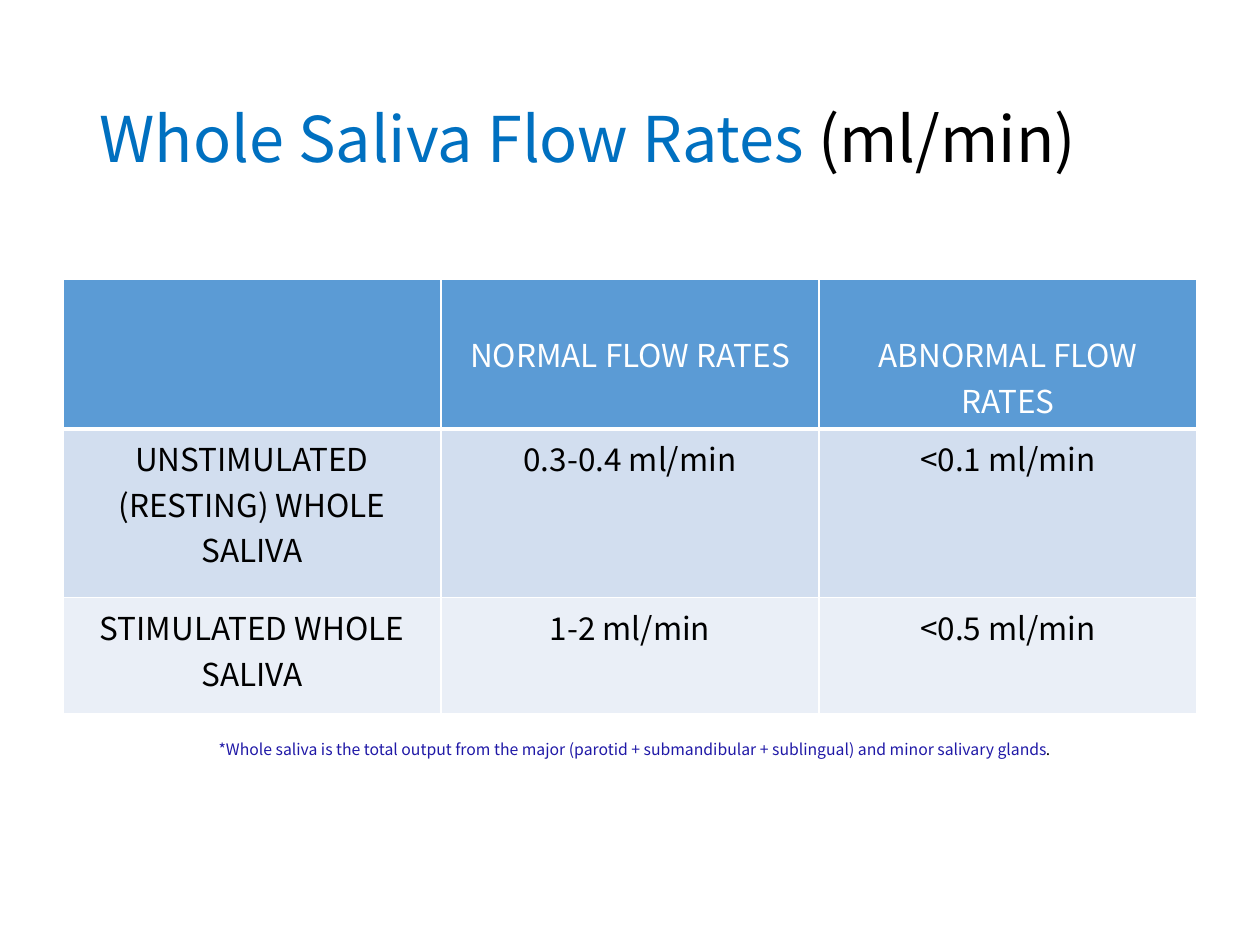
from pptx import Presentation
from pptx.dml.color import RGBColor
from pptx.enum.text import MSO_ANCHOR, MSO_AUTO_SIZE, PP_ALIGN
from pptx.oxml.ns import qn
from pptx.util import Inches, Pt
from lxml.etree import SubElement

COLORS = {
    "title": "0070C0", "text": "000000", "note": "2019A7", "white": "FFFFFF",
    "header": "5B9BD5", "band_dark": "D2DEEF", "band_light": "EAEFF7",
}
FONT = "Noto Sans CJK JP"


def add_text(paragraph, text, size=18, color="text", align=PP_ALIGN.CENTER):
    paragraph.alignment = align
    run = paragraph.add_run()
    run.text = text
    run.font.name = FONT
    run.font.size = Pt(size)
    run.font.bold = False
    run.font.color.rgb = RGBColor.from_string(COLORS[color])


def add_borders(cell, color="white", bottom=1):
    properties = cell._tc.get_or_add_tcPr()
    for side, width in (("L", 1), ("R", 1), ("T", 1), ("B", bottom)):
        line = SubElement(properties, qn(f"a:ln{side}"), w=str(Pt(width)))
        fill = SubElement(line, qn("a:solidFill"))
        SubElement(fill, qn("a:srgbClr"), val=COLORS[color])


class SlideBuilder:
    def __init__(self, presentation):
        self.slide = presentation.slides.add_slide(presentation.slide_layouts[5])

    def title(self, parts, box):
        title = self.slide.shapes.title
        title.left, title.top, title.width, title.height = map(Inches, box)
        frame = title.text_frame
        frame.auto_size = MSO_AUTO_SIZE.NONE
        frame.vertical_anchor = MSO_ANCHOR.MIDDLE
        heading = frame.paragraphs[0]
        heading.line_spacing = 0.9
        for text, color in parts:
            add_text(heading, text, size=36, color=color, align=PP_ALIGN.LEFT)

    def table(self, rows, box, heights, fills):
        table = self.slide.shapes.add_table(
            len(rows), len(rows[0]), *map(Inches, box)).table
        for r, (texts, height, fill) in enumerate(zip(rows, heights, fills)):
            is_header = r == 0
            table.rows[r].height = Inches(height)
            for c, text in enumerate(texts):
                cell = table.cell(r, c)
                add_borders(cell, bottom=3 if is_header else 1)
                cell.fill.solid()
                cell.fill.fore_color.rgb = RGBColor.from_string(COLORS[fill])
                # Header labels sit one line below the top edge
                cell.margin_top = Inches(0.41 if is_header else 0.05)
                if text:
                    add_text(cell.text_frame.paragraphs[0], text,
                             color="white" if is_header else "text")

    def note(self, parts, box):
        frame = self.slide.shapes.add_textbox(*map(Inches, box)).text_frame
        frame.word_wrap = True
        frame.auto_size = MSO_AUTO_SIZE.SHAPE_TO_FIT_TEXT
        for text, color in parts:
            add_text(frame.paragraphs[0], text, size=9, color=color)


def main():
    presentation = Presentation()
    presentation.slide_width, presentation.slide_height = Inches(10), Inches(7.5)
    builder = SlideBuilder(presentation)

    # Title
    builder.title([("Whole Saliva Flow Rates ", "title"), ("(ml/min)", "text")],
                  box=(0.69, 0.4, 8.62, 1.45))

    # Flow rates by type of saliva
    flow_rates = [
        ("", "NORMAL FLOW RATES", "ABNORMAL FLOW RATES"),
        ("UNSTIMULATED (RESTING) WHOLE SALIVA", "0.3-0.4 ml/min", "<0.1 ml/min"),
        ("STIMULATED WHOLE SALIVA", "1-2 ml/min", "<0.5 ml/min"),
    ]
    builder.table(flow_rates, box=(0.5, 2.22, 9, 3.44), heights=(1.18, 1.34, 0.92),
                  fills=("header", "band_dark", "band_light"))

    # Footnote
    builder.note([("*Whole saliva is the total output from the major (parotid + "
                   "submandibular + sublingual) and minor salivary glands", "note"),
                  (".", "text")],
                 box=(0.76, 5.82, 8.55, 0.25))

    presentation.save("out.pptx")


if __name__ == "__main__":
    main()
